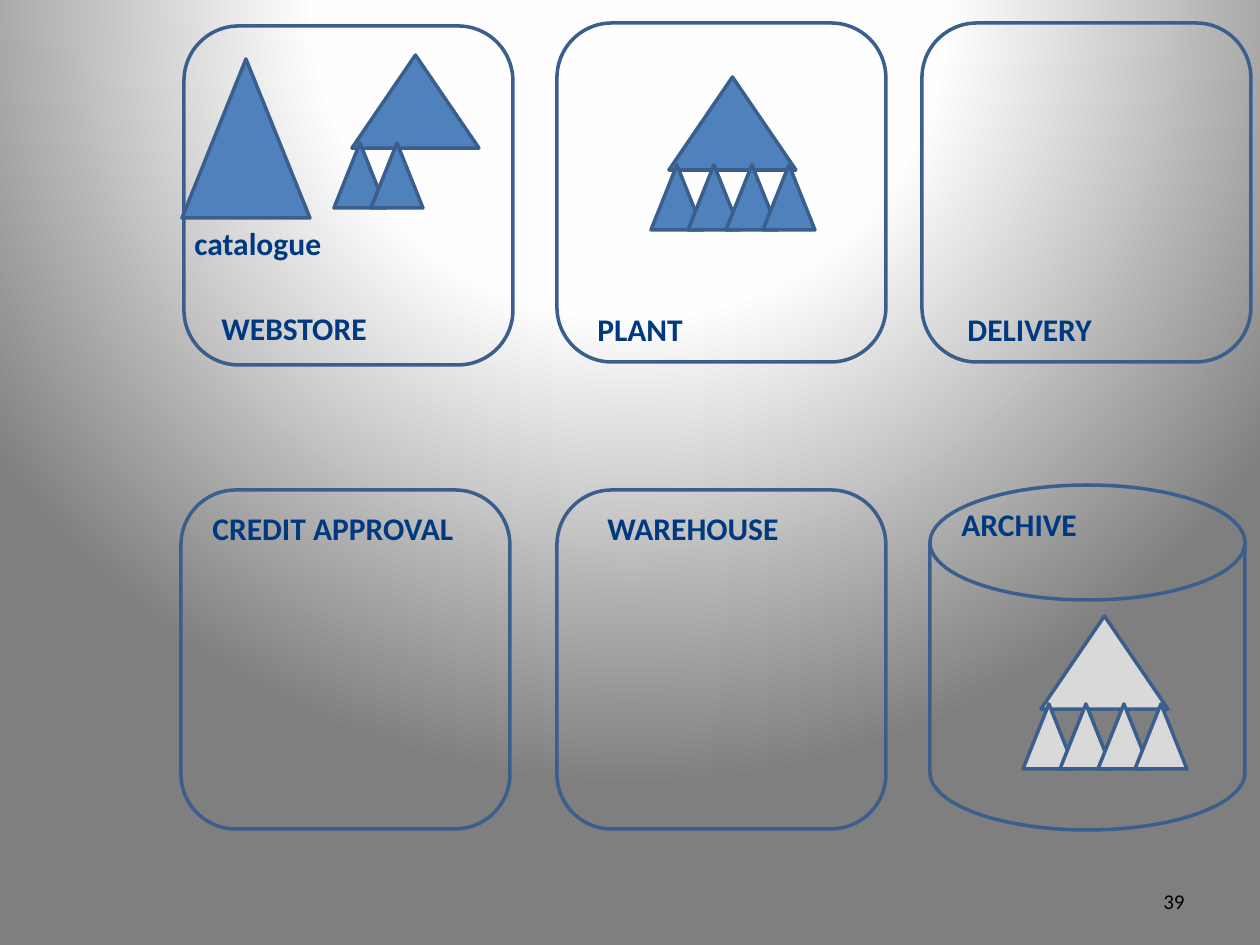
import pptx
import pptx.util
import pptx.oxml
import pptx.dml.color
import pptx.enum.shapes
import pptx.enum.text
from pptx.oxml.ns import qn

RGB = pptx.dml.color.RGBColor
KIND = pptx.enum.shapes.MSO_SHAPE
ALIGN = pptx.enum.text.PP_ALIGN
ANCHOR = pptx.enum.text.MSO_ANCHOR

BLUE = RGB(0x4F, 0x81, 0xBD)
EDGE = RGB(0x3A, 0x5F, 0x8C)
GREY = RGB(0xD9, 0xD9, 0xD9)
NAVY = RGB(0x00, 0x39, 0x80)
BLACK = RGB(0x00, 0x00, 0x00)
STOPS = [(0, "FFFFFF"), (40, "FEFEFE"), (100, "7F7F7F")]

SCALE = pptx.util.Inches(1) / 126  # EMU in one px


def emu(*box):
    return [pptx.util.Emu(round(n * SCALE)) for n in box]


def shade(slide):
    """Fill the background with a round gradient centred above the slide."""
    slide.background.fill.gradient()
    old = slide.element.find(".//" + qn("a:gradFill"))
    stops = "".join(
        f'<a:gs pos="{pos * 1000}"><a:srgbClr val="{tint}"/></a:gs>'
        for pos, tint in STOPS)
    new = pptx.oxml.parse_xml(
        '<a:gradFill rotWithShape="1" '
        'xmlns:a="http://schemas.openxmlformats.org/drawingml/2006/main">'
        f'<a:gsLst>{stops}</a:gsLst><a:path path="circle">'
        '<a:fillToRect l="50000" t="-80000" r="50000" b="180000"/>'
        '</a:path></a:gradFill>')
    old.getparent().replace(old, new)


def draw(slide, kind, box, fill=None):
    shape = slide.shapes.add_shape(kind, *emu(*box))
    shape.shadow.inherit = False
    if fill is None:
        shape.fill.background()
    else:
        shape.fill.solid()
        shape.fill.fore_color.rgb = fill
    shape.line.color.rgb = EDGE
    shape.line.width = pptx.util.Pt(2)


def write(slide, text, box, size=18, color=NAVY, bold=True,
          align=ALIGN.LEFT, anchor=ANCHOR.TOP):
    frame = slide.shapes.add_textbox(*emu(*box)).text_frame
    frame.word_wrap = True
    frame.vertical_anchor = anchor
    para = frame.paragraphs[0]
    para.alignment = align
    run = para.add_run()
    run.text = text
    run.font.name = "Calibri"
    run.font.size = pptx.util.Pt(size)
    run.font.bold = bold
    run.font.color.rgb = color


def card(slide, text, box, label, kind=KIND.ROUNDED_RECTANGLE):
    """Outline a station; label is (left, top, width) within its box."""
    left, top, width = label
    draw(slide, kind, box)
    write(slide, text, (box[0] + left, box[1] + top, width, 63))


def tree(slide, left, top, count, fill):
    """Stack a large triangle on a row of small ones."""
    draw(slide, KIND.ISOSCELES_TRIANGLE, (left, top, 127, 93), fill)
    for i in range(count):
        draw(slide, KIND.ISOSCELES_TRIANGLE,
             (left - 18 + i * 75 // 2, top + 88, 52, 65), fill)


def store(slide, left, top):
    card(slide, "WEBSTORE", (left, top, 329, 339), (25, 277, 222))
    draw(slide, KIND.ISOSCELES_TRIANGLE,
         (left - 2, top + 33, 128, 159), BLUE)
    write(slide, "catalogue", (left - 2, top + 192, 197, 63))
    tree(slide, left + 168, top + 29, 2, BLUE)


def plant(slide, left, top):
    card(slide, "PLANT", (left, top, 329, 339), (28, 281, 140))
    tree(slide, left + 112, top + 54, 4, BLUE)


def archive(slide, left, top):
    card(slide, "ARCHIVE", (left, top, 315, 345), (19, 14, 181),
         KIND.FLOWCHART_MAGNETIC_DISK)
    tree(slide, left + 111, top + 131, 4, GREY)


def main():
    deck = pptx.Presentation()
    deck.slide_width, deck.slide_height = emu(1260, 945)
    slide = deck.slides.add_slide(deck.slide_layouts[6])
    shade(slide)
    store(slide, 184, 26)
    plant(slide, 557, 23)
    card(slide, "DELIVERY", (922, 23, 329, 339), (33, 281, 193))
    card(slide, "CREDIT APPROVAL", (181, 490, 329, 339), (19, 13, 349))
    card(slide, "WAREHOUSE", (557, 490, 329, 339), (38, 13, 256))
    archive(slide, 930, 485)
    write(slide, "39", (903, 876, 294, 50), size=12, color=BLACK,
          bold=False, align=ALIGN.RIGHT, anchor=ANCHOR.MIDDLE)
    deck.save("out.pptx")


if __name__ == "__main__":
    main()
